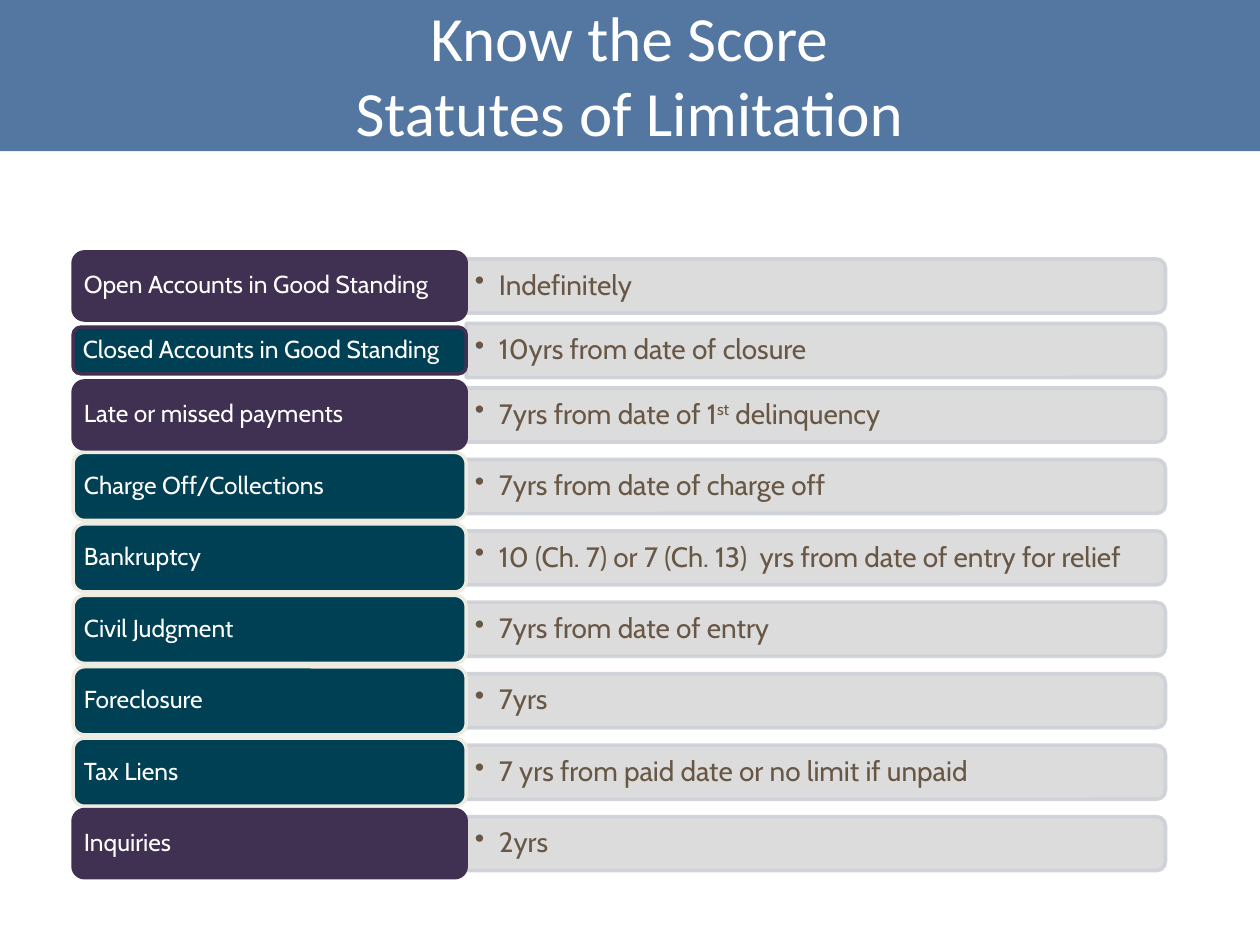
from lxml import etree
from pptx import Presentation
from pptx import util as u
from pptx.dml.color import RGBColor
from pptx.enum import shapes, text
from pptx.oxml.ns import qn

BLUE = RGBColor(0x37, 0x60, 0x92)
GREY = RGBColor(0xD9, 0xD9, 0xD9)
EDGE = RGBColor(0xCD, 0xD0, 0xD7)
PURPLE = RGBColor(0x40, 0x31, 0x52)
TEAL = RGBColor(0x00, 0x40, 0x54)
CREAM = RGBColor(0xEE, 0xEC, 0xE1)
BROWN = RGBColor(0x68, 0x57, 0x45)
WHITE = RGBColor(0xFF, 0xFF, 0xFF)

# Grid in inches: label column, detail column, rows
LABEL_X, LABEL_W = 0.58, 3.12
DETAIL_X, DETAIL_W = LABEL_X + LABEL_W, 5.55
TOP, TALL, SHORT, BAR_H = 2.0, 0.54, 0.37, 0.43
GAP = TALL / 20

# Label, runs of the detail (every second one raised), label height, fill, line
ROWS = [
    ("Open Accounts in Good Standing", ["Indefinitely"], TALL, PURPLE, PURPLE),
    ("Closed Accounts in Good Standing", ["10yrs from date of closure"], SHORT, TEAL, PURPLE),
    ("Late or missed payments", ["7yrs from date of 1", "st", " delinquency"], TALL, PURPLE, PURPLE),
    ("Charge Off/Collections", ["7yrs from date of charge off"], TALL, TEAL, CREAM),
    ("Bankruptcy", ["10 (Ch. 7) or 7 (Ch. 13)  yrs from date of entry for relief"], TALL, TEAL, CREAM),
    ("Civil Judgment", ["7yrs from date of entry"], TALL, TEAL, CREAM),
    ("Foreclosure", ["7yrs"], TALL, TEAL, CREAM),
    ("Tax Liens", ["7 yrs from paid date or no limit if unpaid"], TALL, TEAL, CREAM),
    ("Inquiries", ["2yrs"], TALL, PURPLE, PURPLE),
]


def add_shape(kind, x, y, w, h, fill, line=None, alpha=100):
    sp = s.shapes.add_shape(kind, u.Inches(x), u.Inches(y), u.Inches(w), u.Inches(h))
    sp.shadow.inherit = False
    sp.fill.solid()
    sp.fill.fore_color.rgb = fill
    if line is None:
        sp.line.fill.background()
    else:
        sp.line.color.rgb = line
        sp.line.width = u.Pt(2)
    if alpha < 100:
        for clr in sp._element.spPr.iter(qn("a:srgbClr")):
            etree.SubElement(clr, qn("a:alpha"), val=str(alpha * 1000))
    return sp


def write(sp, paragraphs, side, spacing, align, **font):
    tf = sp.text_frame
    frame = dict(word_wrap=True, vertical_anchor=text.MSO_ANCHOR.MIDDLE,
                 margin_left=u.Inches(side), margin_right=u.Inches(side),
                 margin_top=u.Inches(0.03), margin_bottom=u.Inches(0.03))
    for name, value in frame.items():
        setattr(tf, name, value)
    color = font.pop("color")
    for i, runs in enumerate(paragraphs):
        p = tf.add_paragraph() if i else tf.paragraphs[0]
        p.alignment, p.line_spacing = align, spacing
        for j, words in enumerate(runs):
            r = p.add_run()
            r.text = words
            for name, value in font.items():
                setattr(r.font, name, value)
            r.font.color.rgb = color
            if j % 2:
                r._r.get_or_add_rPr().set("baseline", "30000")
    return tf


prs = Presentation()
prs.slide_width, prs.slide_height = u.Inches(10), u.Inches(7.5)
s = prs.slides.add_slide(prs.slide_layouts[6])
LEFT, CENTER = text.PP_ALIGN.LEFT, text.PP_ALIGN.CENTER

# Title band
add_shape(shapes.MSO_SHAPE.RECTANGLE, -0.01, 0, 10.01, 1.2, BLUE, alpha=85)

# Rows: a rotated bar with its bulleted detail, then the label
y = TOP
for label, detail, height, fill, line in ROWS:
    row_h = max(height, BAR_H)
    mid = y + row_h / 2
    bar = add_shape(shapes.MSO_SHAPE.ROUND_2_SAME_RECTANGLE,
                    DETAIL_X + (DETAIL_W - BAR_H) / 2, mid - DETAIL_W / 2,
                    BAR_H, DETAIL_W, GREY, EDGE, alpha=90)
    bar.rotation = 90

    box = s.shapes.add_textbox(u.Inches(DETAIL_X), u.Inches(mid - 0.195),
                               u.Inches(DETAIL_W - 0.02), u.Inches(0.39))
    tf = write(box, [detail], 0.07, 0.9, LEFT, name="Cabin", size=u.Pt(16), color=BROWN)
    pPr = tf.paragraphs[0]._p.get_or_add_pPr()
    indent = u.Inches(0.19)
    pPr.set("marL", str(indent))
    pPr.set("indent", str(-indent))
    etree.SubElement(pPr, qn("a:buChar"), char="•")

    pill = add_shape(shapes.MSO_SHAPE.ROUNDED_RECTANGLE, LABEL_X, mid - height / 2,
                     LABEL_W, height, fill, line)
    write(pill, [[label]], 0.06, 0.9, LEFT, name="Cabin", size=u.Pt(14), color=WHITE)
    y += row_h + GAP

# Title
title = s.shapes.add_textbox(u.Inches(1.58), 0, u.Inches(6.83), u.Inches(1.17))
write(title, [["Know the Score"], ["Statutes of Limitation"]], 0.1, 1.0, CENTER,
      name="Calibri", size=u.Pt(36), color=WHITE)

prs.save("out.pptx")
